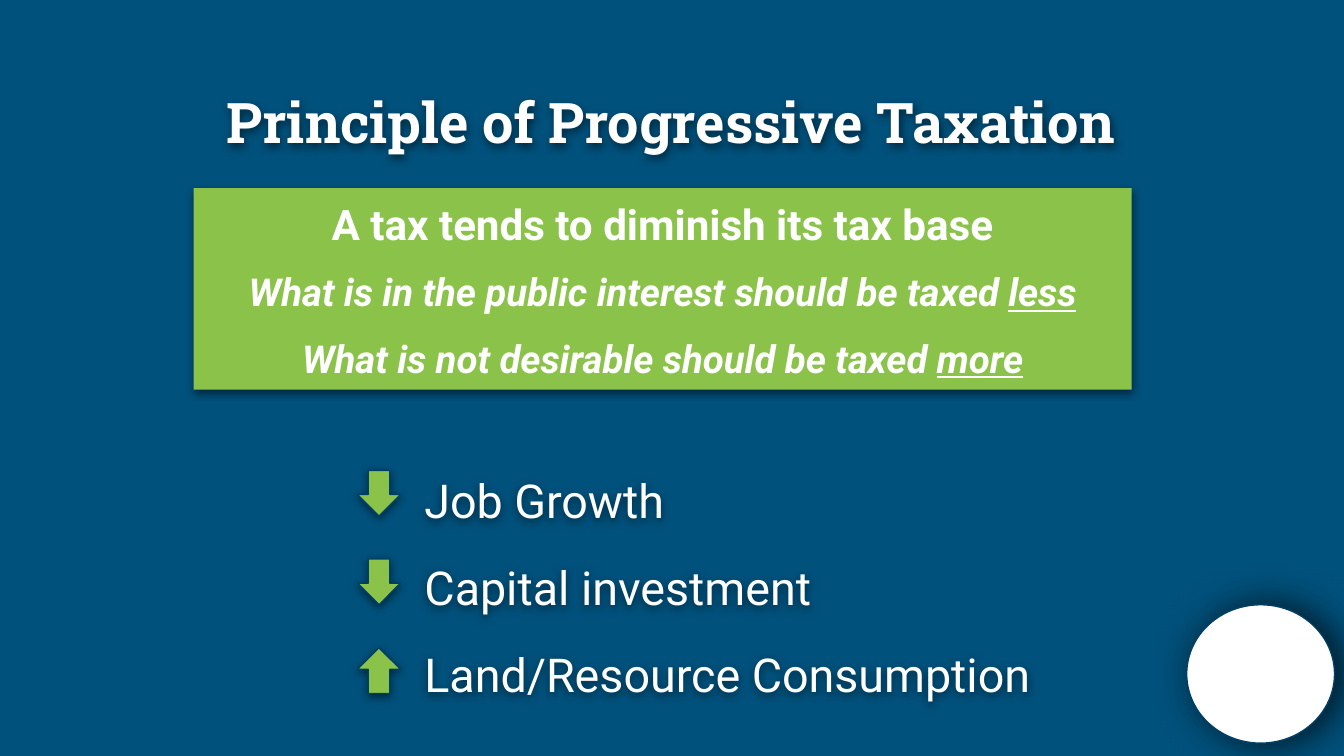
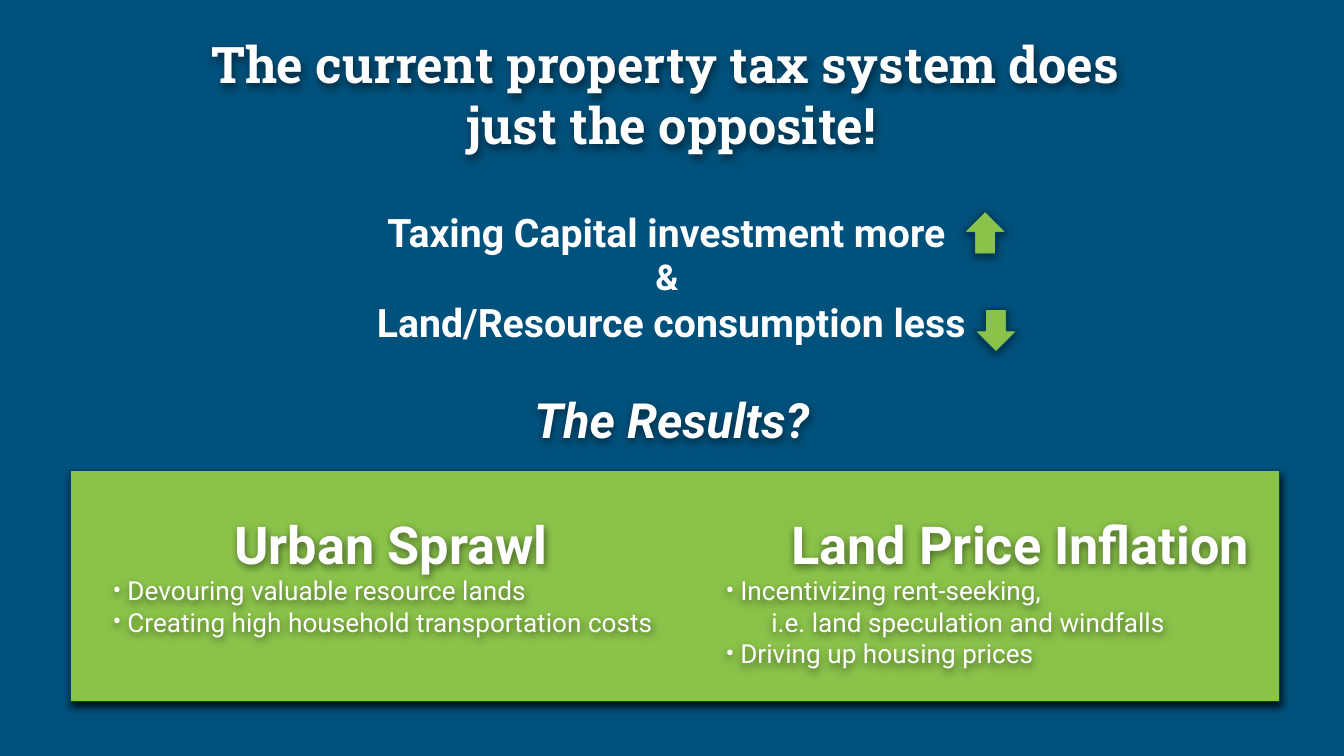
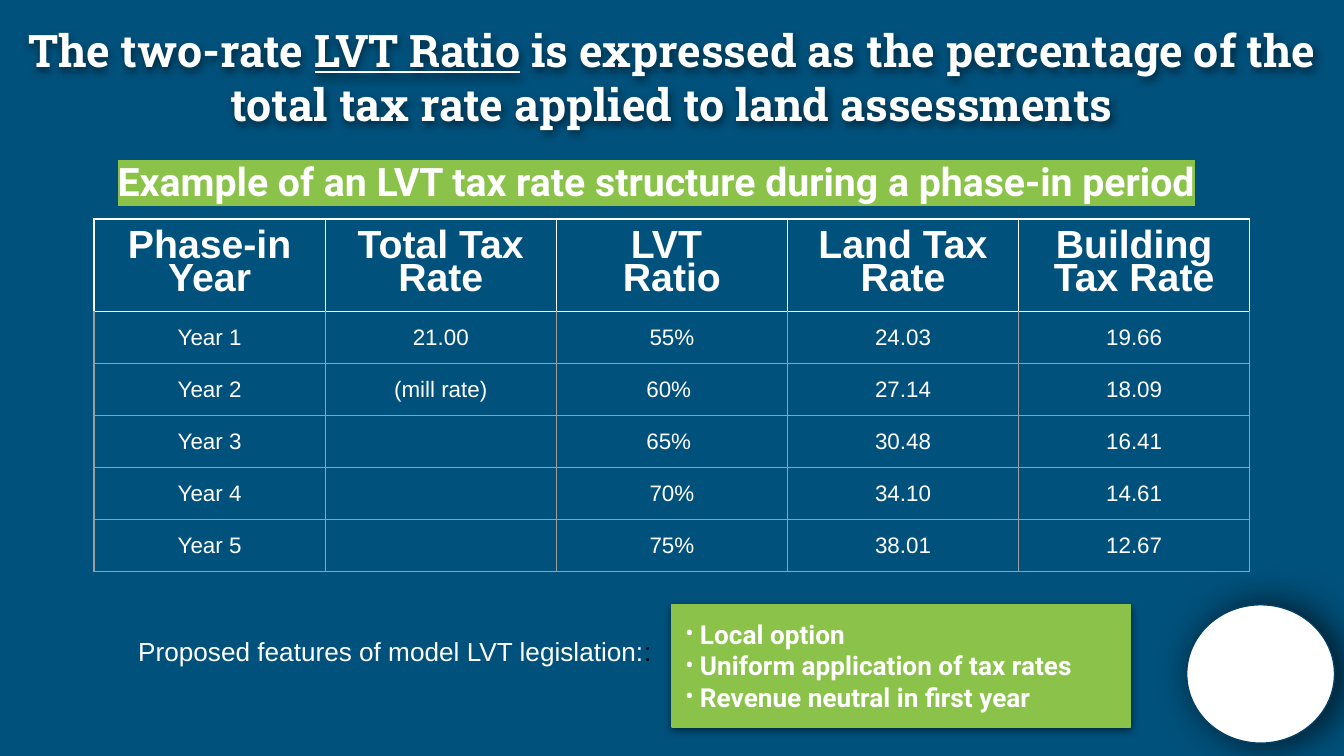
import lxml.etree
import pptx
import pptx.dml.color
import pptx.enum.shapes
import pptx.enum.text
import pptx.oxml.ns
import pptx.util

Inches = pptx.util.Inches
Pt = pptx.util.Pt
SHAPES = pptx.enum.shapes.MSO_SHAPE
ALIGN = pptx.enum.text.PP_ALIGN
ANCHOR = pptx.enum.text.MSO_ANCHOR
qn = pptx.oxml.ns.qn

NAVY, OUTLINE, GREEN = "00517C", "004065", "8BC34A"
WHITE, GREY, BLACK = "FFFFFF", "9E9E9E", "000000"
HEADING_FONT, BODY_FONT, PLAIN_FONT = "Roboto Slab", "Roboto", "Arial"
UP, DOWN = 270, 90
HEADERS = [["Phase-in Year"], ["Total Tax Rate"], ["LVT ", "Ratio"],
           ["Land Tax Rate"], ["Building Tax Rate"]]
RATES = [
    ["Year 1", "21.00", "55%", "24.03", "19.66"],
    ["Year 2", "(mill rate)", "60% ", "27.14", "18.09"],
    ["Year 3", "", "65% ", "30.48", "16.41"],
    ["Year 4", "", "70%", "34.10", "14.61"],
    ["Year 5", "", "75%", "38.01", "12.67"],
]


def rgb(value):
    """Turn a hex string into a colour."""
    return pptx.dml.color.RGBColor.from_string(value)


def child(parent, tag, **attributes):
    """Append a drawing element with the given attributes."""
    return lxml.etree.SubElement(parent, qn(tag), {k: str(v) for k, v in attributes.items()})


def cast_shadow(shape, opacity=50, blur=4.5, distance=1.5, angle=90):
    """Give a shape a soft black outer shadow."""
    shape.shadow.inherit = False
    effects = shape._element.spPr.find(qn("a:effectLst"))
    outer = child(effects, "a:outerShdw", blurRad=Pt(blur), dist=Pt(distance),
                  dir=angle * 60000, algn="bl", rotWithShape=0)
    color = child(outer, "a:srgbClr", val=BLACK)
    child(color, "a:alpha", val=opacity * 1000)


def place(shape, box):
    """Move a shape to a box of left, top, width and height in inches."""
    shape.left, shape.top, shape.width, shape.height = map(Inches, box)


def prepare_frame(shape, anchor=ANCHOR.TOP, margin=0.1):
    """Set wrapping, anchor and margins, and return the text frame."""
    frame = shape.text_frame
    frame.word_wrap = True
    frame.auto_size = pptx.enum.text.MSO_AUTO_SIZE.NONE
    frame.vertical_anchor = anchor
    frame.margin_left = frame.margin_right = Inches(0.1)
    frame.margin_top = frame.margin_bottom = Inches(margin)
    return frame


def add_para(frame, align=ALIGN.LEFT, spacing=1.0, before=0, bullet=False, indent=0):
    """Start the next paragraph, with an optional bullet or left indent."""
    first = frame.paragraphs[0]
    fresh = len(frame.paragraphs) == 1 and not first.runs
    para = first if fresh else frame.add_paragraph()
    para.alignment = align
    para.line_spacing = spacing
    para.space_before = Pt(0 if fresh else before)
    properties = para._p.get_or_add_pPr()
    properties.set("marL", str(Inches(0.11 if bullet else indent)))
    properties.set("indent", str(Inches(-0.11 if bullet else 0)))
    if bullet:
        child(properties, "a:buFont", typeface=BODY_FONT)
        child(properties, "a:buChar", char="•")
    else:
        child(properties, "a:buNone")
    return para


def add_span(para, text, size, font=BODY_FONT, color=WHITE, bold=False, italic=False,
             underline=False):
    """Add one formatted run to a paragraph."""
    span = para.add_run()
    span.text = text
    span.font.size = Pt(size)
    span.font.name = font
    span.font.bold = bold
    span.font.italic = italic
    span.font.underline = underline
    span.font.color.rgb = rgb(color)
    return span


def add_text_box(page, box, shadow=True, margin=0.1):
    """Add a text box and return its frame."""
    shape = page.shapes.add_textbox(*map(Inches, box))
    if shadow:
        cast_shadow(shape)
    return prepare_frame(shape, margin=margin)


def add_panel(page, kind, box, fill=GREEN, line=OUTLINE, **shadow):
    """Add a filled preset shape with a shadow."""
    shape = page.shapes.add_shape(kind, *map(Inches, box))
    shape.fill.solid()
    shape.fill.fore_color.rgb = rgb(fill)
    shape.line.color.rgb = rgb(line)
    shape.line.width = Pt(0.75)
    cast_shadow(shape, **shadow)
    return shape


def add_arrow(page, left, top, direction, width=0.32):
    """Add a green arrow that points up or down."""
    arrow = add_panel(page, SHAPES.RIGHT_ARROW, (left, top, width, 0.32))
    arrow.rotation = direction


def add_badge(page):
    """Add the white disc in the lower right corner."""
    add_panel(page, SHAPES.OVAL, (8.83, 4.5, 1.1, 1.03), fill=WHITE,
              opacity=75, blur=21.4, distance=4.5, angle=0)


def fill_title(page, box, size, lines):
    """Write the title from lines of text and underline pairs."""
    title = page.shapes.title
    place(title, box)
    cast_shadow(title)
    frame = prepare_frame(title, ANCHOR.BOTTOM)
    for line in lines:
        para = add_para(frame, ALIGN.CENTER)
        for text, underline in line:
            add_span(para, text, size, HEADING_FONT, bold=True, underline=underline)


def body_frame(page, box):
    """Place the body placeholder and return its frame."""
    body = page.placeholders[1]
    place(body, box)
    return prepare_frame(body)


def add_bullets(frame, lines, bold=False):
    """Write bulleted lines of 14 points."""
    for line in lines:
        add_span(add_para(frame, bullet=True), line, 14, bold=bold)


def build_principle(page):
    """Build the slide on the principle of progressive taxation."""
    fill_title(page, (0.42, 0.5, 9.15, 0.75), 30,
               [[("Principle of Progressive Taxation", False)]])
    frame = body_frame(page, (1.44, 1.4, 6.98, 1.5))
    panel = page.placeholders[1]
    panel.fill.solid()
    panel.fill.fore_color.rgb = rgb(GREEN)
    cast_shadow(panel)
    add_span(add_para(frame, ALIGN.CENTER, 0.95), "A tax tends to diminish its tax base",
             22.6, bold=True)
    for text, stress in [("What is in the public interest should be taxed ", "less"),
                         ("What is not desirable should be taxed ", "more")]:
        para = add_para(frame, ALIGN.CENTER, 0.95, before=12)
        add_span(para, text, 20.55, bold=True, italic=True)
        add_span(para, stress, 20.55, bold=True, italic=True, underline=True)
    effects = add_text_box(page, (3.06, 3.35, 4.8, 1.93))
    for row, (label, direction) in enumerate([("Job Growth", DOWN), ("Capital investment", DOWN),
                                              ("Land/Resource Consumption", UP)]):
        add_span(add_para(effects, spacing=1.15, before=12), label, 25)
        add_arrow(page, 2.65, 3.51 + 0.66 * row, direction, width=0.34)
    add_badge(page)


def add_result(page, box, heading):
    """Add a result column with its heading and return the frame."""
    frame = add_text_box(page, box)
    add_span(add_para(frame, ALIGN.CENTER), heading, 28, bold=True)
    return frame


def build_opposite(page):
    """Build the slide on the current property tax system."""
    panel = add_panel(page, SHAPES.RECTANGLE, (0.52, 3.5, 9, 1.72), opacity=78)
    page.shapes._spTree.insert(2, panel._element)
    fill_title(page, (0.42, 0.16, 9.15, 1.09), 27,
               [[("The current property tax system does ", False)],
                [("just the opposite!", False)]])
    frame = body_frame(page, (0.42, 1.45, 9.15, 3.04))
    for text, size in [("Taxing Capital investment more ", 21), ("& ", 19),
                       ("Land/Resource consumption less", 21)]:
        add_span(add_para(frame, ALIGN.CENTER), text, size, bold=True)
    add_arrow(page, 7.17, 1.57, UP)
    add_arrow(page, 7.25, 2.3, DOWN)
    sprawl = add_result(page, (0.74, 3.71, 4.34, 1.14), "Urban Sprawl")
    add_bullets(sprawl, ["Devouring valuable resource lands",
                         "Creating high household transportation costs"])
    inflation = add_result(page, (5.3, 3.71, 4.58, 1.38), "Land Price Inflation")
    add_bullets(inflation, ["Incentivizing rent-seeking, "])
    add_span(add_para(inflation, indent=0.34), "i.e. land speculation and windfalls", 14)
    add_bullets(inflation, ["Driving up housing prices"])
    results = add_text_box(page, (3.77, 2.74, 2.46, 0.85))
    add_span(add_para(results, ALIGN.CENTER, 1.15), "The Results?", 26, bold=True, italic=True)


def border_cell(cell, colors):
    """Draw the left, right, top and bottom borders of a cell."""
    cell.fill.background()
    properties = cell._tc.get_or_add_tcPr()
    for index, (side, color) in enumerate(zip("LRTB", colors)):
        line = child(properties, f"a:ln{side}", w=Pt(0.75))
        child(child(line, "a:solidFill"), "a:srgbClr", val=color)
        properties.insert(index, line)


def fill_cell(cell, lines, size, spacing, bold):
    """Write centred lines into a table cell."""
    cell.margin_left = cell.margin_right = Inches(0.1)
    cell.margin_top = cell.margin_bottom = Inches(0.1)
    for line in lines:
        para = add_para(cell.text_frame, ALIGN.CENTER, spacing)
        if line:
            add_span(para, line, size, PLAIN_FONT, bold=bold)
        else:
            ending = child(para._p, "a:endParaRPr", sz=size * 100)
            child(ending, "a:latin", typeface=PLAIN_FONT)


def add_rate_table(page, box):
    """Add the table of tax rates by phase-in year."""
    graphic = page.shapes.add_table(len(RATES) + 1, len(HEADERS), *map(Inches, box))
    table = graphic.table
    table.first_row = table.horz_banding = False
    for column in table.columns:
        column.width = Inches(box[2] / len(HEADERS))
    for index, row in enumerate(table.rows):
        row.height = Inches(0.38 if index else 0.68)
    for column, lines in enumerate(HEADERS):
        cell = table.cell(0, column)
        fill_cell(cell, lines, 21, 0.75, True)
        border_cell(cell, [WHITE] * 4)
    for row, values in enumerate(RATES, 1):
        top = WHITE if row == 1 else GREY
        for column, value in enumerate(values):
            cell = table.cell(row, column)
            fill_cell(cell, [value], 12, 1.0, False)
            border_cell(cell, [GREY, GREY, top, GREY])


def build_ratio(page):
    """Build the slide on the two-rate ratio."""
    fill_title(page, (0.04, 0, 9.92, 1.07), 24,
               [[("The two-rate ", False), ("LVT Ratio", True),
                 (" is expressed as the percentage of the total tax rate applied to "
                  "land assessments", False)]])
    frame = body_frame(page, (0.42, 1.07, 9.15, 0.56))
    frame.margin_right = Inches(0.32)
    span = add_span(add_para(frame, ALIGN.CENTER),
                    "Example of an LVT tax rate structure during a phase-in period", 21, bold=True)
    properties = span.font._element
    highlight = child(properties, "a:highlight")
    child(highlight, "a:srgbClr", val=GREEN)
    properties.find(qn("a:latin")).addprevious(highlight)
    add_rate_table(page, (0.7, 1.63, 8.6, 2.73))
    features = add_panel(page, SHAPES.RECTANGLE, (5, 4.5, 3.41, 0.91), line=GREEN)
    add_bullets(prepare_frame(features),
                ["Local option", "Uniform application of tax rates",
                 "Revenue neutral in first year"], bold=True)
    add_badge(page)
    label = add_text_box(page, (0.93, 4.68, 5.2, 0.34), shadow=False, margin=0.05)
    para = add_para(label)
    add_span(para, "Proposed features of model LVT legislation:", 14, PLAIN_FONT)
    add_span(para, ":", 14, PLAIN_FONT, BLACK)


def main():
    """Build the deck and save it."""
    deck = pptx.Presentation()
    deck.slide_width = Inches(10)
    deck.slide_height = Inches(10 * 9 / 16)
    background = deck.slide_master.background.fill
    background.solid()
    background.fore_color.rgb = rgb(NAVY)
    for build in (build_principle, build_opposite, build_ratio):
        build(deck.slides.add_slide(deck.slide_layouts[1]))
    deck.save("out.pptx")


if __name__ == "__main__":
    main()
